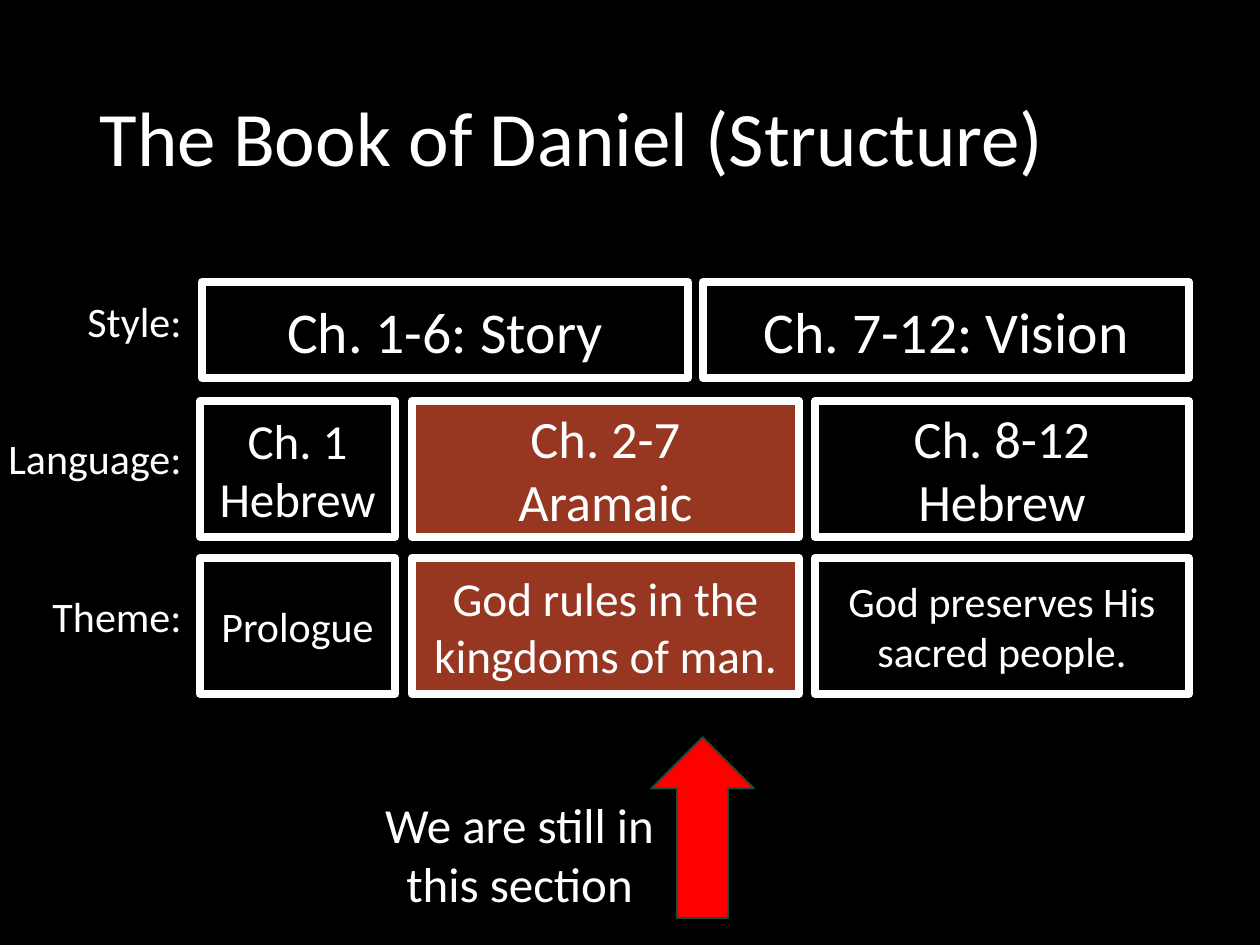
"""Builds a slide charting the structure of the Book of Daniel."""
import pptx
import pptx.dml.color
import pptx.enum.shapes
import pptx.enum.text
import pptx.util

RGBColor = pptx.dml.color.RGBColor
SHAPE = pptx.enum.shapes.MSO_SHAPE
ALIGN = pptx.enum.text.PP_ALIGN
ANCHOR = pptx.enum.text.MSO_ANCHOR

BLACK = RGBColor(0x00, 0x00, 0x00)
WHITE = RGBColor(0xFF, 0xFF, 0xFF)
RUST = RGBColor(0x97, 0x37, 0x21)
RED = RGBColor(0xFF, 0x00, 0x00)
DARK_GREEN = RGBColor(0x12, 0x4D, 0x3D)

PX_PER_INCH = 126
FONT = "Calibri"
COLUMNS = [(200, 195), (412, 387), (815, 374)]
STYLE_ROW = (282, 96)
LANGUAGE_ROW = (401, 136)
THEME_ROW = (558, 136)

BOXES = [
    ((202, 486), STYLE_ROW, ["Ch. 1-6: Story"], 33, None),
    ((703, 486), STYLE_ROW, ["Ch. 7-12: Vision"], 33, None),
    (COLUMNS[0], LANGUAGE_ROW, ["Ch. 1 Hebrew"], 28, None),
    (COLUMNS[1], LANGUAGE_ROW, ["Ch. 2-7", "Aramaic"], 30, RUST),
    (COLUMNS[2], LANGUAGE_ROW, ["Ch. 8-12", "Hebrew"], 30, None),
    (COLUMNS[0], THEME_ROW, ["Prologue"], 24, None),
    (COLUMNS[1], THEME_ROW, ["God rules in the kingdoms of man."], 27, RUST),
    (COLUMNS[2], THEME_ROW, ["God preserves His sacred people."], 24, None),
]
LABELS = [("Style:", -4, 286), ("Language:", -25, 423), ("Theme:", -4, 581)]
LABEL_RIGHT, LABEL_HEIGHT = 194, 70


def px(n):
    """Turn pixels into EMU."""
    return pptx.util.Emu(round(n * pptx.util.Inches(1) / PX_PER_INCH))


def set_attrs(obj, values):
    """Set each attribute named in a dict."""
    for name, value in values.items():
        setattr(obj, name, value)


def write(sp, lines, size, align, anchor=ANCHOR.MIDDLE, **para):
    """Fill a shape with white paragraphs."""
    tf = sp.text_frame
    set_attrs(tf, {"word_wrap": True, "vertical_anchor": anchor})
    tf.text = "\n".join(lines)
    for p in tf.paragraphs:
        set_attrs(p, {"alignment": align, **para})
        for r in p.runs:
            set_attrs(r.font, {"name": FONT, "size": pptx.util.Pt(size)})
            r.font.color.rgb = WHITE


def add_shape(s, kind, place, fill, line, width):
    """Add a preset shape without shadow."""
    sp = s.shapes.add_shape(kind, *map(px, place))
    sp.shadow.inherit = False
    if fill is None:
        sp.fill.background()
    else:
        sp.fill.solid()
        sp.fill.fore_color.rgb = fill
    sp.line.color.rgb = line
    sp.line.width = pptx.util.Pt(width)
    return sp


def add_box(s, column, row, lines, size, fill):
    """Add one outlined box of the structure chart."""
    (left, width), (top, height) = column, row
    place = (left, top, width, height)
    sp = add_shape(s, SHAPE.RECTANGLE, place, fill, WHITE, 4.5)
    write(sp, lines, size, ALIGN.CENTER)


def add_text(s, place, text, size, align, anchor):
    """Add a wrapping text box."""
    sp = s.shapes.add_textbox(*map(px, place))
    write(sp, [text], size, align, anchor)
    return sp


def add_title(s, place, text):
    """Place and format the title."""
    sp = s.shapes.title
    set_attrs(sp, dict(zip(("left", "top", "width", "height"), map(px, place))))
    write(sp, [text], 44, ALIGN.LEFT, line_spacing=0.9)


def main():
    """Build and save the slide."""
    prs = pptx.Presentation()
    set_attrs(prs, {"slide_width": px(1260), "slide_height": px(945)})
    s = prs.slides.add_slide(prs.slide_layouts[5])
    s.background.fill.solid()
    s.background.fill.fore_color.rgb = BLACK

    add_title(s, (87, 50, 1086, 183), "The Book of Daniel (Structure)")
    for box in BOXES:
        add_box(s, *box)
    for text, left, top in LABELS:
        place = (left, top, LABEL_RIGHT - left, LABEL_HEIGHT)
        add_text(s, place, text, 24, ALIGN.RIGHT, ANCHOR.MIDDLE)

    arrow = add_shape(s, SHAPE.DOWN_ARROW, (651, 737, 103, 181), RED, DARK_GREEN, 1)
    arrow.rotation = 180
    note = add_text(s, (369, 788, 301, 131), "We are still in this section",
                    28, ALIGN.CENTER, ANCHOR.TOP)
    note.text_frame.auto_size = pptx.enum.text.MSO_AUTO_SIZE.SHAPE_TO_FIT_TEXT

    prs.save("out.pptx")


if __name__ == "__main__":
    main()
